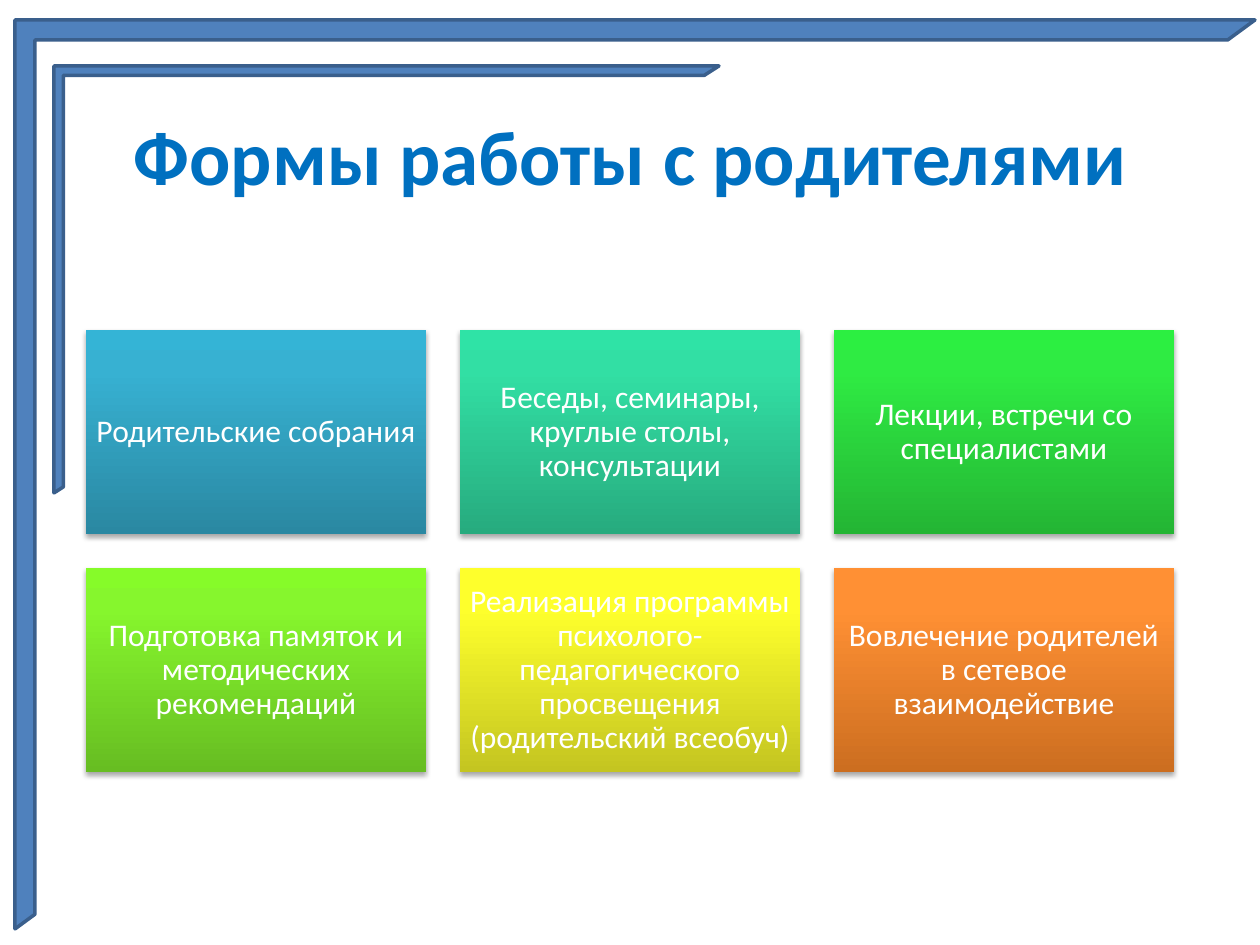
from pptx import Presentation
from pptx.dml.color import RGBColor
from pptx.enum.shapes import MSO_SHAPE as SHAPE
from pptx.enum.text import MSO_ANCHOR as ANCHOR, PP_ALIGN as ALIGN
from pptx.oxml import parse_xml
from pptx.oxml.ns import nsdecls, qn
from pptx.util import Emu, Pt

FRAMES = [(54, 66, 665, 427), (15, 20, 1240, 909)]
TILES = [
    ("Родительские собрания", "2A88A2", "37B1D2", "34B4D6"),
    ("Беседы, семинары, круглые столы, консультации", "27AB7E", "32DFA4", "2FE3A6"),
    ("Лекции, встречи со специалистами", "24B534", "2FEB43", "2CEF41"),
    ("Подготовка памяток и методических рекомендаций", "67BD22", "86F62D", "86FB29"),
    ("Реализация программы психолого-педагогического просвещения "
     "(родительский всеобуч)", "C4C521", "FEFF2C", "FEFF2D"),
    ("Вовлечение родителей в сетевое взаимодействие", "CC6E20", "FF9034", "FF9136"),
]
COLUMNS, LEFT, TOP, WIDTH, HEIGHT, GAP = 3, 86, 330, 340, 204, 34


def px(n):
    return Emu(round(n * 914400 / 126))


def color(value):
    return RGBColor.from_string(value)


def set_text(shape, text, size, fill, bold=False, spacing=None, inset=None):
    tf = shape.text_frame
    tf.word_wrap = True
    tf.vertical_anchor = ANCHOR.MIDDLE
    if inset is not None:
        tf.margin_left = tf.margin_right = tf.margin_top = tf.margin_bottom = px(inset)
    p = tf.paragraphs[0]
    p.alignment = ALIGN.CENTER
    if spacing:
        p.line_spacing = spacing
    r = p.add_run()
    r.text = text
    r.font.name, r.font.size, r.font.bold = "Calibri", Pt(size), bold
    r.font.color.rgb = color(fill)


def add_shape(s, kind, x, y, w, h):
    sp = s.shapes.add_shape(kind, px(x), px(y), px(w), px(h))
    sp.shadow.inherit = False
    return sp


def add_frame(s, box):
    sp = add_shape(s, SHAPE.HALF_FRAME, *box)
    sp.adjustments[0] = sp.adjustments[1] = 0.022
    sp.fill.solid()
    sp.fill.fore_color.rgb = color("4F81BD")
    sp.line.color.rgb = color("3A5F8C")
    sp.line.width = Pt(2)


def set_gradient(sp, colors):
    """Fill from bottom to top, with stops at 0, 80 and 100 percent."""
    sp.fill.gradient()
    sp.fill.gradient_angle = 90
    stops = sp._element.spPr.find(qn("a:gradFill")).find(qn("a:gsLst"))
    for stop in list(stops):
        stops.remove(stop)
    for percent, value in zip((0, 80, 100), colors):
        stops.append(parse_xml(
            f'<a:gs {nsdecls("a")} pos="{percent * 1000}"><a:srgbClr val="{value}"/></a:gs>'))


def add_shadow(sp):
    sp._element.spPr.find(qn("a:effectLst")).append(parse_xml(
        f'<a:outerShdw {nsdecls("a")} blurRad="{Pt(3.1)}" dist="{Pt(1.8)}" dir="5400000" '
        'rotWithShape="0"><a:srgbClr val="000000"><a:alpha val="35000"/></a:srgbClr>'
        '</a:outerShdw>'))


def add_tile(s, index, text, colors):
    row, col = divmod(index, COLUMNS)
    sp = add_shape(s, SHAPE.RECTANGLE, LEFT + col * (WIDTH + GAP),
                   TOP + row * (HEIGHT + GAP), WIDTH, HEIGHT)
    set_gradient(sp, colors)
    sp.line.fill.background()
    add_shadow(sp)
    set_text(sp, text, 18, "FFFFFF", spacing=0.9, inset=9)


def add_title(s, text):
    title = s.shapes.title
    title.left, title.top, title.width, title.height = map(px, (64, 76, 1134, 158))
    set_text(title, text, 44, "0070C0", bold=True)


def main():
    prs = Presentation()
    prs.slide_width, prs.slide_height = px(1260), px(945)
    s = prs.slides.add_slide(prs.slide_layouts[5])
    for box in FRAMES:
        add_frame(s, box)
    add_title(s, "Формы работы с родителями")
    for index, (text, *colors) in enumerate(TILES):
        add_tile(s, index, text, colors)
    prs.save("out.pptx")


if __name__ == "__main__":
    main()
